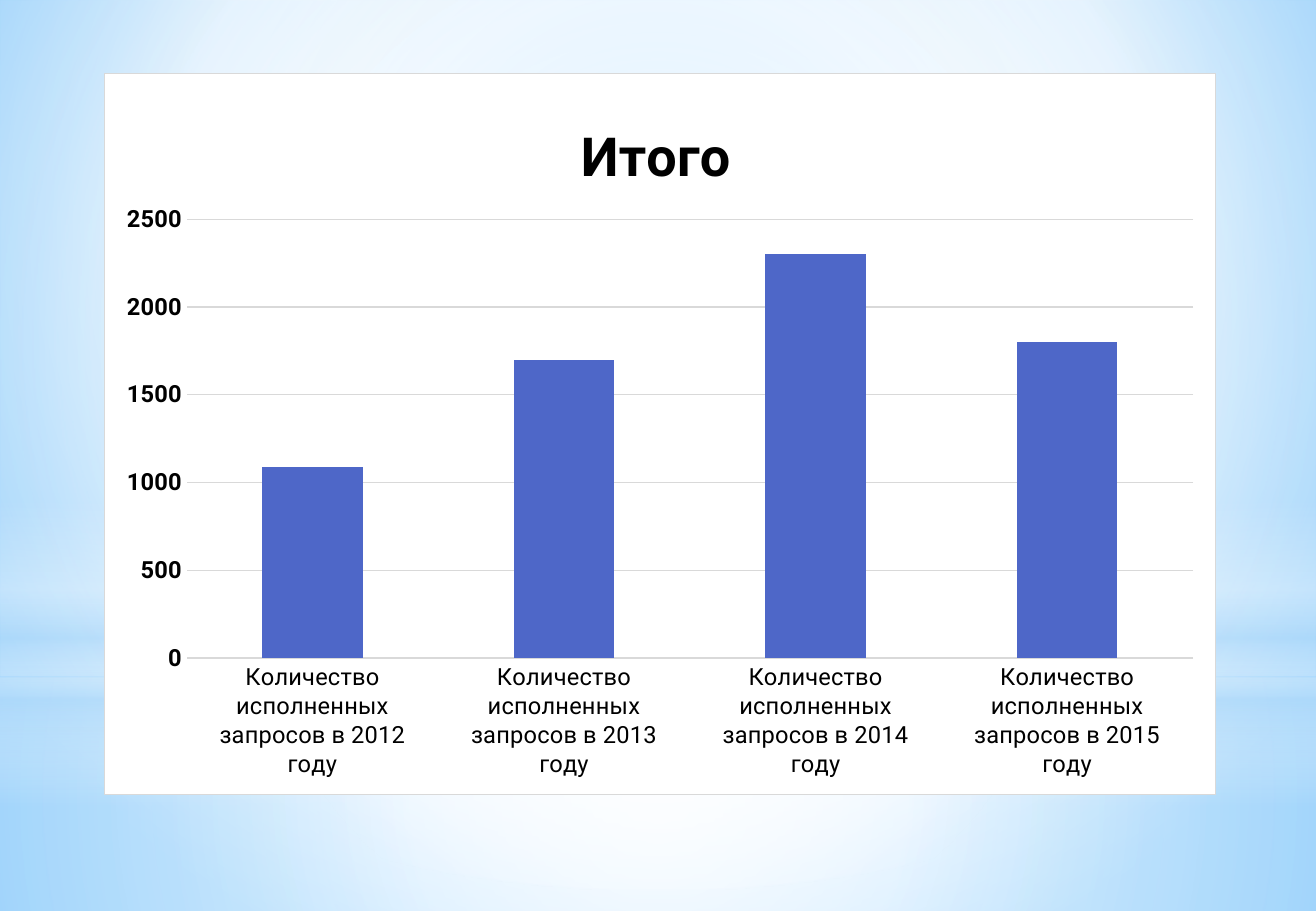
"""Build a slide with a column chart of completed requests by year."""
from pptx import Presentation
from pptx import util as u
from pptx.chart import data as chart_data
from pptx.dml.color import RGBColor
from pptx.enum import chart as charts, shapes
from pptx.oxml import ns, parse_xml

PX = 7526
WIDTH, HEIGHT = 1316, 911
COLOURS = {
    "white": "FFFFFF", "black": "000000", "grid": "D9D9D9", "bar": "4E67C8",
    "mist": "B4DCFA", "sky": "9ED5FF", "blue": "5BB9FF",
}


def set_gradient(properties, stops, direction):
    """Replace the solid fill by gradient stops of position, colour and opacity."""
    stop_xml = "".join(
        f'<a:gs pos="{position * 1000}"><a:srgbClr val="{COLOURS[colour]}">'
        f'<a:alpha val="{opacity * 1000}"/></a:srgbClr></a:gs>'
        for position, colour, opacity in stops)
    if isinstance(direction, int):
        shade = f'<a:lin ang="{direction * 60000}" scaled="0"/>'
    else:
        edges = " ".join(f'{side}="{value * 1000}"' for side, value in zip("ltrb", direction))
        shade = f'<a:path path="circle"><a:fillToRect {edges}/></a:path>'
    solid = properties.find(ns.qn("a:solidFill"))
    properties.replace(solid, parse_xml(
        f'<a:gradFill {ns.nsdecls("a")} rotWithShape="1">'
        f'<a:gsLst>{stop_xml}</a:gsLst>{shade}</a:gradFill>'))


def set_layout(parent, index, target, **fractions):
    """Place a chart part by fractions of the chart's size."""
    for layout in parent.findall(ns.qn("c:layout")):
        parent.remove(layout)
    modes = '<c:xMode val="edge"/><c:yMode val="edge"/>'
    values = "".join(f'<c:{name} val="{value}"/>' for name, value in fractions.items())
    parent.insert(index, parse_xml(
        f'<c:layout {ns.nsdecls("c")}><c:manualLayout>{target}{modes}{values}'
        '</c:manualLayout></c:layout>'))


presentation = Presentation()
presentation.slide_width, presentation.slide_height = WIDTH * PX, HEIGHT * PX
slide = presentation.slides.add_slide(presentation.slide_layouts[6])

slide.background.fill.solid()
set_gradient(slide.element.find(".//" + ns.qn("p:bgPr")),
             [(0, "sky", 100), (60, "white", 100), (100, "blue", 100)], (20, 10, 20, 60))

centre = (50, 50, 50, 50)
rectangle, oval = shapes.MSO_SHAPE.RECTANGLE, shapes.MSO_SHAPE.OVAL
glows = [
    (rectangle, 678, 233, [(0, "white", 91), (37, "white", 76), (100, "mist", 79)], centre),
    (rectangle, 0, 678, [(0, "white", 89), (48, "white", 62), (100, "mist", 79)], centre),
    (rectangle, 501, 304, [(0, "white", 0), (29, "white", 30), (45, "mist", 40),
                           (55, "white", 26), (65, "mist", 60), (100, "white", 0)], 90),
    (oval, 213, 678, [(0, "white", 100), (56, "white", 0)], centre),
]
for kind, top, height, stops, direction in glows:
    shape = slide.shapes.add_shape(kind, 0, top * PX, WIDTH * PX, height * PX)
    shape.shadow.inherit = False
    shape.line.fill.background()
    shape.fill.solid()
    set_gradient(shape.element.spPr, stops, direction)

requests = chart_data.CategoryChartData()
requests.categories = [f"Количество исполненных запросов в {year} году"
                       for year in range(2012, 2016)]
requests.add_series("Итого ", (1090, 1700, 2300, 1800))
chart = slide.shapes.add_chart(
    charts.XL_CHART_TYPE.COLUMN_CLUSTERED, 104 * PX, 73 * PX, 1112 * PX, 722 * PX, requests).chart
chart.has_legend = False

plot = chart.plots[0]
plot.gap_width = 150
plot.vary_by_categories = False
bars = plot.series[0].format.fill
bars.solid()
bars.fore_color.rgb = RGBColor.from_string(COLOURS["bar"])

title = chart.chart_title.text_frame
title.text = "Итого "
category_axis, value_axis = chart.category_axis, chart.value_axis
fonts = [
    (chart.font, {"size": u.Pt(10), "bold": False}),
    (title.paragraphs[0].runs[0].font, {"size": u.Pt(32), "bold": True}),
    (category_axis.tick_labels.font, {"size": u.Pt(14), "bold": False}),
    (value_axis.tick_labels.font, {"size": u.Pt(14), "bold": True}),
]
for font, formats in fonts:
    for name, value in {"name": "Roboto", **formats}.items():
        setattr(font, name, value)
    font.color.rgb = RGBColor.from_string(COLOURS["black"])

for axis in (category_axis, value_axis):
    axis.major_tick_mark = axis.minor_tick_mark = charts.XL_TICK_MARK.NONE
    axis.format.line.fill.background()
for name, value in {"minimum_scale": 0, "maximum_scale": 2500, "major_unit": 500}.items():
    setattr(value_axis, name, value)
grid = value_axis.major_gridlines.format.line
grid.width = u.Pt(0.75)
grid.color.rgb = RGBColor.from_string(COLOURS["grid"])

chart_space = chart.element
set_layout(chart_space.find(".//" + ns.qn("c:title")), 1, "", x=0.42, y=0.05)
set_layout(chart_space.find(".//" + ns.qn("c:plotArea")), 0,
           '<c:layoutTarget val="inner"/>', x=0.074, y=0.202, w=0.906, h=0.609)
chart_space.find(ns.qn("c:txPr")).addprevious(parse_xml(
    f'<c:spPr {ns.nsdecls("c", "a")}>'
    f'<a:solidFill><a:srgbClr val="{COLOURS["white"]}"/></a:solidFill>'
    f'<a:ln w="{u.Pt(0.75)}"><a:solidFill><a:srgbClr val="{COLOURS["grid"]}"/></a:solidFill></a:ln>'
    '</c:spPr>'))

presentation.save("out.pptx")
